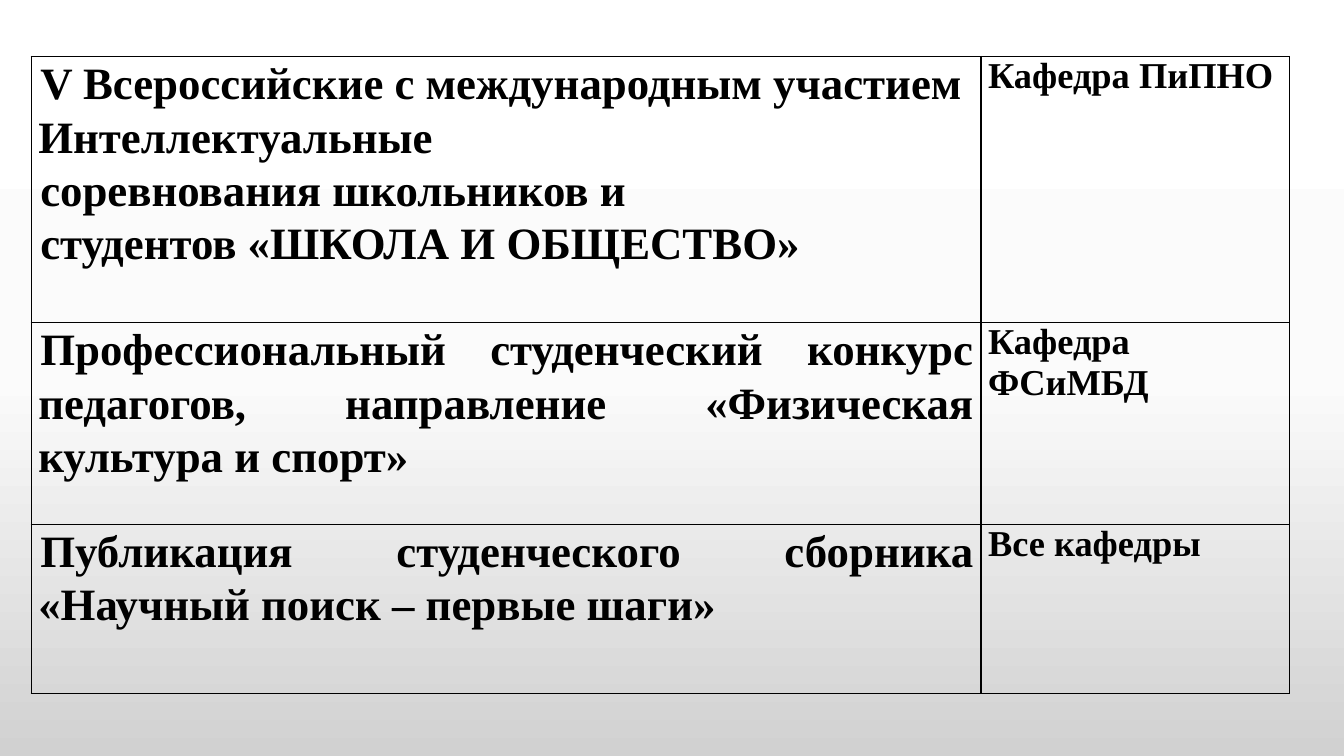
from copy import deepcopy
from dataclasses import dataclass

from lxml.etree import SubElement
from pptx import Presentation
from pptx.dml.color import RGBColor
from pptx.enum.text import PP_ALIGN
from pptx.oxml.ns import qn
from pptx.util import Inches, Pt


@dataclass(frozen=True)
class Theme:
    """Hold the colours, font and type sizes of the slide."""
    ink: str = "000000"
    gradient: tuple = ((0, "FFFFFF"), (0.5, "FBFBFB"), (1, "D1D1D1"))
    font: str = "Times New Roman"
    event_size: int = 32
    department_size: int = 26
    border: float = 1


THEME = Theme()
COLUMN_WIDTHS = (9.42, 3.06)
ROW_HEIGHTS = (2.64, 2, 1.68)
EVENTS = (
    (("V Всероссийские с международным участием Интеллектуальные",
      "соревнования школьников и",
      "студентов «ШКОЛА И ОБЩЕСТВО»"), PP_ALIGN.LEFT, "Кафедра ПиПНО"),
    (("Профессиональный студенческий конкурс педагогов, "
      "направление «Физическая культура и спорт»",), PP_ALIGN.JUSTIFY, "Кафедра ФСиМБД"),
    (("Публикация студенческого сборника «Научный поиск – первые шаги»",),
     PP_ALIGN.JUSTIFY, "Все кафедры"),
)


def paint_background(slide):
    """Fill the slide with a gradient running from top to bottom."""
    fill = slide.background.fill
    fill.gradient()
    fill.gradient_angle = 270
    stop_list = slide.element.find(".//" + qn("a:gsLst"))
    stop_list.insert(1, deepcopy(stop_list[0]))
    for stop, (position, color) in zip(fill.gradient_stops, THEME.gradient):
        stop.position = position
        stop.color.rgb = RGBColor.from_string(color)


def write_paragraph(paragraph, text, size, alignment, line_spacing=None, indent=0):
    """Put formatted text in a paragraph."""
    paragraph.alignment = alignment
    if line_spacing:
        paragraph.line_spacing = line_spacing
    properties = paragraph._p.get_or_add_pPr()
    properties.set("marL", "0")
    properties.set("indent", str(Inches(indent)))
    run = paragraph.add_run()
    run.text = text
    run.font.name = THEME.font
    run.font.size = Pt(size)
    run.font.bold = True
    run.font.color.rgb = RGBColor.from_string(THEME.ink)


def write_cell(cell, lines, **text_format):
    """Format a bordered, transparent cell and write its lines."""
    cell.margin_left = cell.margin_right = Inches(0.07)
    cell.margin_top = cell.margin_bottom = 0
    cell.fill.background()
    properties = cell._tc.get_or_add_tcPr()
    for index, side in enumerate(("a:lnL", "a:lnR", "a:lnT", "a:lnB")):
        line = SubElement(properties, qn(side), w=str(Pt(THEME.border)))
        solid = SubElement(line, qn("a:solidFill"))
        SubElement(solid, qn("a:srgbClr"), val=THEME.ink)
        properties.insert(index, line)
    frame = cell.text_frame
    for index, text in enumerate(lines):
        paragraph = frame.add_paragraph() if index else frame.paragraphs[0]
        write_paragraph(paragraph, text, **text_format)


def add_events_table(slide, left, top, width, height):
    """Place the table of events and departments in the given box."""
    table = slide.shapes.add_table(
        len(EVENTS), len(COLUMN_WIDTHS),
        Inches(left), Inches(top), Inches(width), Inches(height)).table
    table.first_row = table.horz_banding = False
    for column, share in zip(table.columns, COLUMN_WIDTHS):
        column.width = Inches(width * share / sum(COLUMN_WIDTHS))
    for row, share in zip(table.rows, ROW_HEIGHTS):
        row.height = Inches(height * share / sum(ROW_HEIGHTS))
    for row, (lines, alignment, department) in zip(table.rows, EVENTS):
        event_cell, department_cell = row.cells
        write_cell(event_cell, lines, size=THEME.event_size,
                   alignment=alignment, line_spacing=1.07, indent=0.02)
        write_cell(department_cell, (department,), size=THEME.department_size,
                   alignment=PP_ALIGN.JUSTIFY)


def main():
    """Build and save the presentation."""
    presentation = Presentation()
    presentation.slide_width = Inches(13.33)
    presentation.slide_height = Inches(7.5)
    slide = presentation.slides.add_slide(presentation.slide_layouts[6])
    paint_background(slide)
    add_events_table(slide, 0.31, 0.56, sum(COLUMN_WIDTHS), sum(ROW_HEIGHTS))
    presentation.save("out.pptx")


if __name__ == "__main__":
    main()
